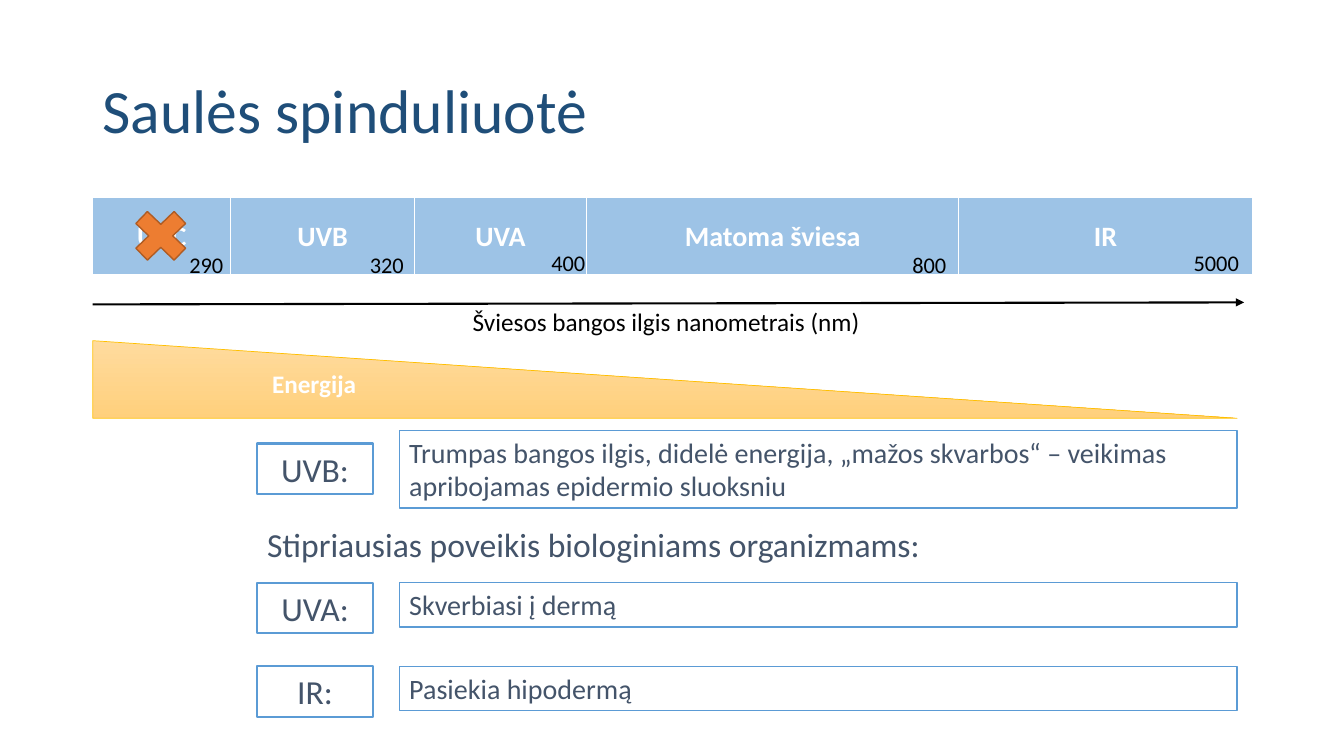
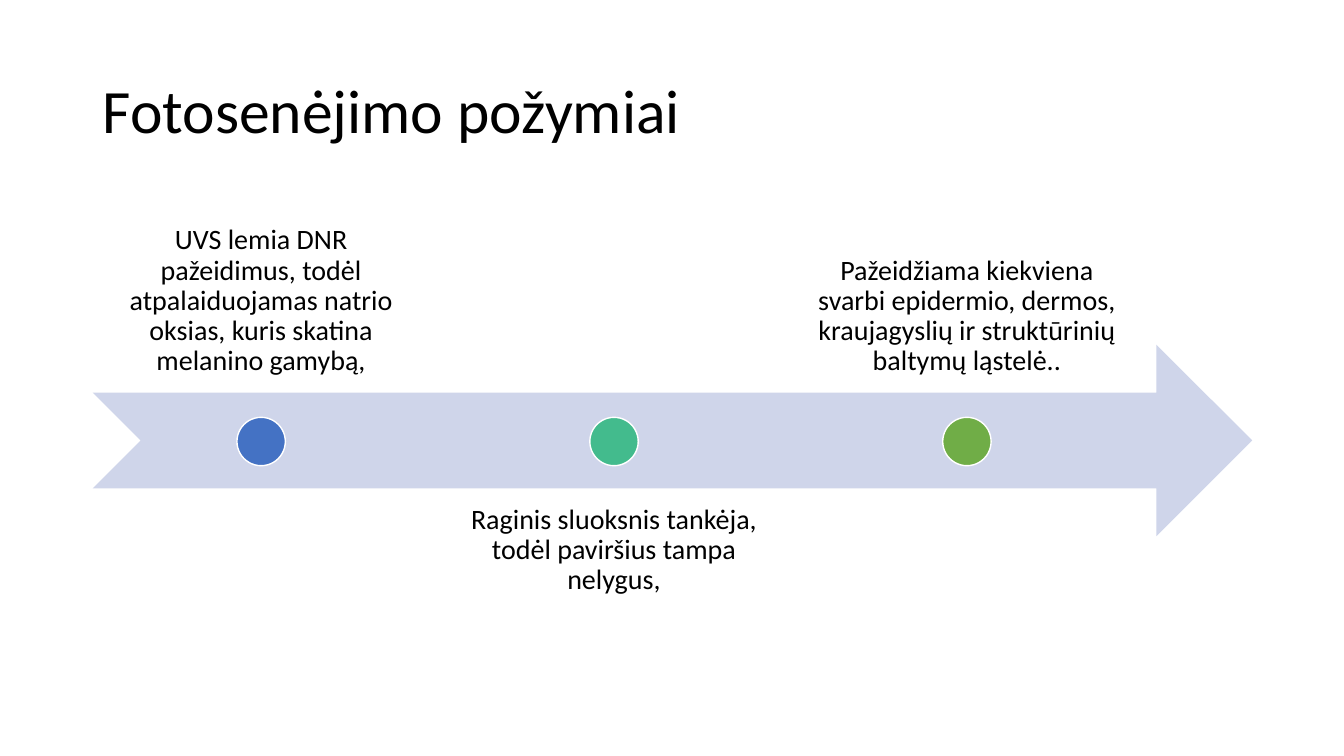
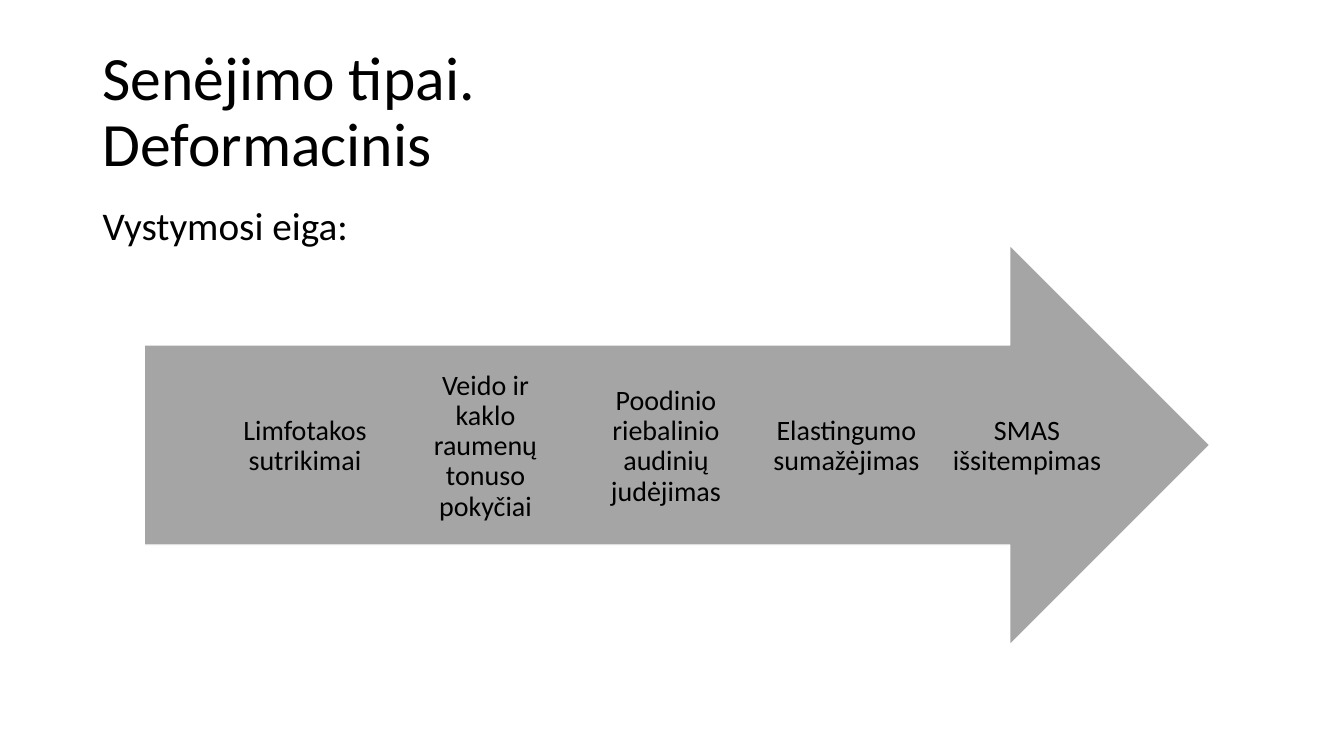
from lxml import etree
from pptx import Presentation
from pptx import util as u
from pptx.dml.color import RGBColor
from pptx.enum import shapes, text
from pptx.oxml import ns

FONT = "Calibri"
HEX = {"black": "000000", "white": "FFFFFF", "navy": "1F4E79", "slate": "44546A",
       "sky": "9DC3E6", "blue": "5B9BD5", "orange": "ED7D31", "rust": "AF5C24",
       "cream": "FFDB9E", "sand": "FFD07C", "gold": "FFC000", "pale": "CFD5EA",
       "royal": "4472C4", "teal": "43BB8D", "green": "70AD47", "gray": "A5A5A5"}
RGB = {name: RGBColor.from_string(code) for name, code in HEX.items()}
KIND = shapes.MSO_SHAPE
MID, LOW, TOP = text.MSO_ANCHOR.MIDDLE, text.MSO_ANCHOR.BOTTOM, text.MSO_ANCHOR.TOP
LEFT, MIDST = text.PP_ALIGN.LEFT, text.PP_ALIGN.CENTER


def write(frame, words, size, color="black", bold=False, align=LEFT, anchor=TOP,
          pads=(0.1, 0.05), space=None):
    """Fill a text frame with one paragraph; a newline is a line break."""
    frame.word_wrap = True
    frame.vertical_anchor = anchor
    frame.margin_left = frame.margin_right = u.Inches(pads[0])
    frame.margin_top = frame.margin_bottom = u.Inches(pads[1])
    para = frame.paragraphs[0]
    para.alignment = align
    if space:
        para.line_spacing = space
    for i, line in enumerate(words.split("\n")):
        if i:
            para.add_line_break()
        run = para.add_run()
        run.text = line
        run.font.name, run.font.size, run.font.bold = FONT, u.Pt(size), bold
        run.font.color.rgb = RGB[color]


def draw(slide, kind, spot, fill=None, line=None, width=1):
    """Add a preset shape, or a text box when kind is None."""
    place = [u.Inches(n) for n in spot]
    if kind is None:
        return slide.shapes.add_textbox(*place)
    shape = slide.shapes.add_shape(kind, *place)
    shape.shadow.inherit = False
    if fill:
        shape.fill.solid()
        shape.fill.fore_color.rgb = RGB[fill]
    else:
        shape.fill.background()
    if line:
        shape.line.color.rgb = RGB[line]
        shape.line.width = u.Pt(width)
    else:
        shape.line.fill.background()
    return shape


deck = Presentation()
deck.slide_width, deck.slide_height = u.Inches(13.33), u.Inches(7.5)

# Slides and titles
pages = []
for title, color in [("Saulės spinduliuotė", "navy"), ("Fotosenėjimo požymiai", "black"),
                     ("Senėjimo tipai.\nDeformacinis", "black")]:
    page = deck.slides.add_slide(deck.slide_layouts[6])
    box = draw(page, None, (0.92, 0.4, 11.5, 1.45))
    write(box.text_frame, title, 44, color, anchor=MID, space=0.9)
    pages.append(page)
sun, signs, types = pages

# Sun: spectrum table
bands = [("UVC", 1.37), ("UVB", 1.82), ("UVA", 1.71), ("Matoma šviesa", 3.69), ("IR", 2.91)]
frame = sun.shapes.add_table(1, len(bands), u.Inches(0.92), u.Inches(1.96),
                             u.Inches(11.5), u.Inches(0.78))
table = frame.table
table.rows[0].height = u.Inches(0.78)
for i, (name, width) in enumerate(bands):
    table.columns[i].width = u.Inches(width)
    cell = table.cell(0, i)
    write(cell.text_frame, name, 20, "white", True, MIDST)
    cell.vertical_anchor = MID
    props = cell._tc.get_or_add_tcPr()
    for side, weight in [("L", 1), ("R", 1), ("T", 1), ("B", 3)]:
        edge = etree.SubElement(props, ns.qn("a:ln" + side), w=str(u.Pt(weight)))
        paint = etree.SubElement(edge, ns.qn("a:solidFill"))
        etree.SubElement(paint, ns.qn("a:srgbClr"), val=HEX["white"])
    cell.fill.solid()
    cell.fill.fore_color.rgb = RGB["sky"]

# Sun: wavelength limits
for mark, x, y, width in [("290", 1.78, 2.44, 0.6), ("320", 3.57, 2.44, 0.6),
                          ("400", 5.37, 2.42, 0.6), ("800", 8.95, 2.44, 0.6),
                          ("5000", 11.74, 2.42, 0.74)]:
    write(draw(sun, None, (x, y, width, 0.37)).text_frame, mark, 16)

# Sun: wavelength axis
axis = sun.shapes.add_connector(shapes.MSO_CONNECTOR.STRAIGHT, u.Inches(0.92), u.Inches(3.02),
                                u.Inches(12.34), u.Inches(3))
axis.line.color.rgb = RGB["black"]
axis.line.width = u.Pt(1.5)
etree.SubElement(axis.line._get_or_add_ln(), ns.qn("a:tailEnd"), type="triangle")
etree.SubElement(axis._element.spPr, ns.qn("a:effectLst"))
box = draw(sun, None, (4.59, 2.99, 4.08, 0.4))
write(box.text_frame, "Šviesos bangos ilgis nanometrais (nm)", 18)
box.text_frame.word_wrap = False

# Sun: cross over UVC and energy wedge
draw(sun, KIND.MATH_MULTIPLY, (1.23, 1.99, 0.73, 0.7), "orange", "rust")
wedge = draw(sun, KIND.RIGHT_TRIANGLE, (0.92, 3.38, 11.35, 0.77), None, "gold", 0.5)
wedge.fill.gradient()
wedge.fill.gradient_angle = 270
for stop, color in zip(wedge.fill.gradient_stops, ["cream", "sand"]):
    stop.color.rgb = RGB[color]
write(draw(sun, None, (2.6, 3.61, 6.13, 0.4)).text_frame, "Energija", 18, "white", True)

# Sun: effect of each band
for name, y, note, top, height in [
        ("UVB:", 4.4, "Trumpas bangos ilgis, didelė energija, „mažos skvarbos“ – "
         "veikimas apribojamas epidermio sluoksniu", 4.27, 0.77),
        ("UVA:", 5.78, "Skverbiasi į dermą", 5.78, 0.44),
        ("IR:", 6.61, "Pasiekia hipodermą", 6.61, 0.44)]:
    tag = draw(sun, KIND.RECTANGLE, (2.55, y, 1.15, 0.5), None, "blue", 1.5)
    write(tag.text_frame, name, 24, "slate", align=MIDST)
    box = draw(sun, KIND.RECTANGLE, (3.96, top, 8.31, height), "white", "blue")
    write(box.text_frame, note, 20, "slate")
box = draw(sun, None, (2.55, 5.15, 10.08, 0.5))
write(box.text_frame, "Stipriausias poveikis biologiniams organizmams:", 24, "slate")

# Signs: timeline with notes above and below in turn
draw(signs, KIND.NOTCHED_RIGHT_ARROW, (0.92, 3.42, 11.5, 1.9), "pale")
for i, (note, color) in enumerate([
        ("UVS lemia DNR pažeidimus, todėl atpalaiduojamas natrio oksias, "
         "kuris skatina melanino gamybą,", "royal"),
        ("Raginis sluoksnis tankėja, todėl paviršius tampa nelygus,", "teal"),
        ("Pažeidžiama kiekviena svarbi epidermio, dermos, kraujagyslių ir "
         "struktūrinių baltymų ląstelė..", "green")]):
    x = 0.92 + 3.5 * i
    y, anchor = (4.85, TOP) if i % 2 else (2, LOW)
    box = draw(signs, None, (x, y, 3.34, 1.9))
    write(box.text_frame, note, 20, align=MIDST, anchor=anchor, pads=(0.16, 0.16), space=0.9)
    draw(signs, KIND.OVAL, (x + 1.43, 4.14, 0.48, 0.48), color, "white")

# Types: lead line and steps in an arrow
box = draw(types, None, (0.92, 2, 11.5, 4.76))
write(box.text_frame, "Vystymosi eiga:", 28, space=0.9)
draw(types, KIND.RIGHT_ARROW, (1.43, 2.43, 10.57, 3.97), "gray", "white")
for i, step in enumerate(["Limfotakos sutrikimai", "Veido ir kaklo raumenų tonuso pokyčiai",
                          "Poodinio riebalinio audinių judėjimas", "Elastingumo sumažėjimas",
                          "SMAS išsitempimas"]):
    box = draw(types, None, (2.28 + 1.79 * i, 3.44, 1.49, 1.98))
    write(box.text_frame, step, 20, align=MIDST, anchor=MID, pads=(0, 0.22), space=0.9)

deck.save("out.pptx")
